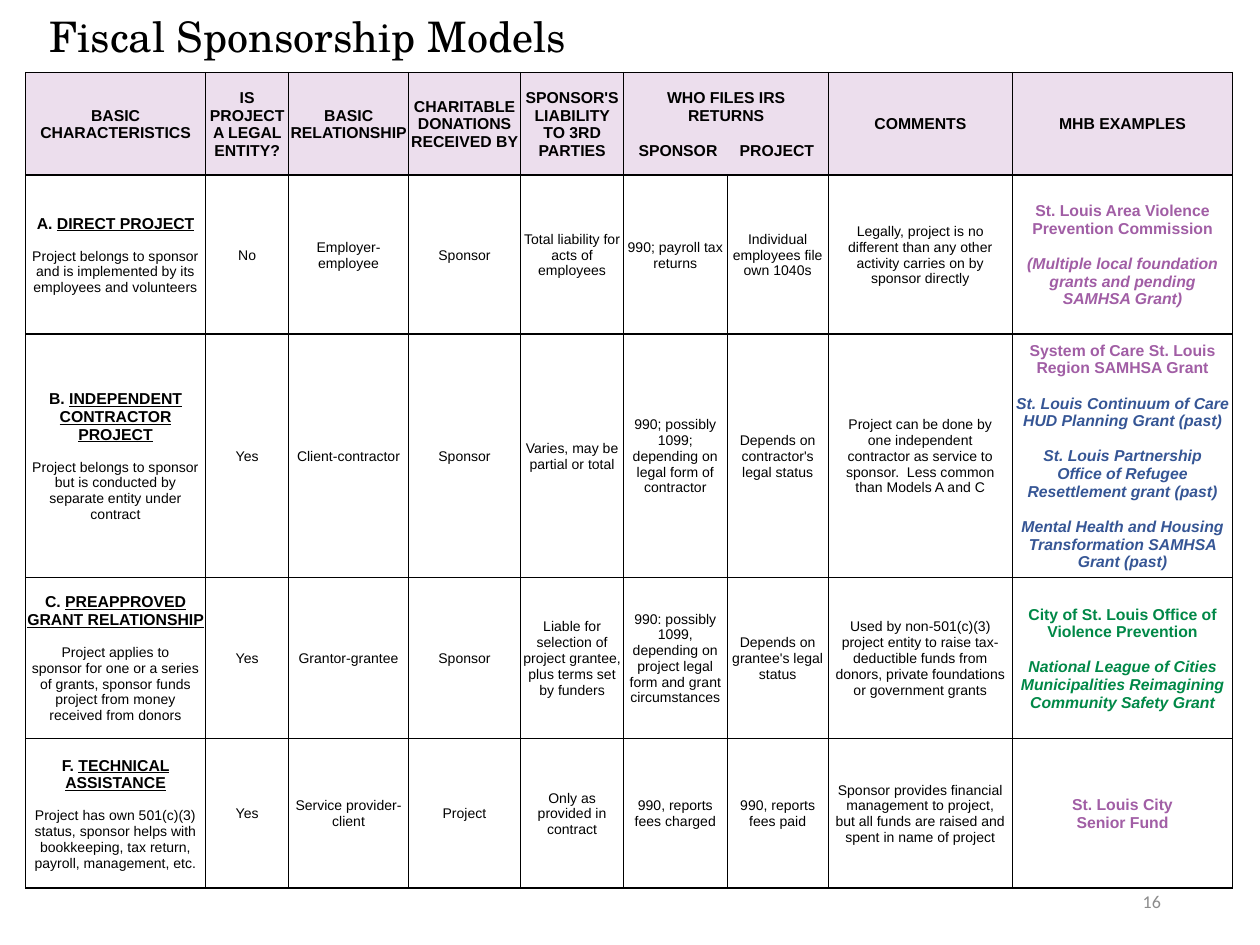
from dataclasses import dataclass

from lxml import etree
from pptx import Presentation
from pptx.dml.color import RGBColor
from pptx.enum import text as t
from pptx.oxml import ns
from pptx.util import Pt


@dataclass(frozen=True)
class Theme:
    ink: str = "000000"
    gray: str = "8C8C8C"
    tint: str = "ECDEED"
    plum: str = "A15EA5"
    blue: str = "365695"
    green: str = "008847"
    serif: str = "TeX Gyre Schola"
    sans: str = "Arial"
    foot: str = "Calibri"
    title: float = 24
    head: float = 9
    body: float = 8
    page: float = 10.3
    gap: float = 10


TH = Theme()
MID = t.MSO_ANCHOR.MIDDLE
COLS = [103, 47.5, 68.5, 64, 59, 59, 58, 105, 126]
ROWS = [58.5, 91, 131.5, 92, 85.5]
FILES = 5  # first of the two columns under the tax returns heading
HEADS = ["BASIC CHARACTERISTICS", "IS PROJECT A LEGAL ENTITY?",
         "BASIC RELATIONSHIP", "CHARITABLE DONATIONS RECEIVED BY",
         "SPONSOR'S LIABILITY TO 3RD PARTIES", "WHO FILES IRS RETURNS", "",
         "COMMENTS", "MHB EXAMPLES"]

# Letter, name, summary, plain cells, examples, colours of first and later examples
MODELS = [
    ("A. ", "DIRECT PROJECT",
     "Project belongs to sponsor and is implemented by its employees and volunteers",
     ["No", "Employer-employee", "Sponsor", "Total liability for acts of employees",
      "990; payroll tax returns", "Individual employees file own 1040s",
      "Legally, project is no different than any other activity carries on by\n"
      "sponsor directly"],
     ["St. Louis Area Violence Prevention Commission",
      "(Multiple local foundation grants and pending SAMHSA Grant)"],
     (TH.plum, TH.plum)),
    ("B. ", "INDEPENDENT CONTRACTOR PROJECT",
     "Project belongs to sponsor but is conducted by separate entity under contract",
     ["Yes", "Client-contractor", "Sponsor", "Varies, may be partial or total",
      "990; possibly 1099; depending on legal form of contractor",
      "Depends on contractor's legal status",
      "Project can be done by\none independent\n"
      "contractor as service to sponsor.  Less common\nthan Models A and C"],
     ["System of Care St. Louis Region SAMHSA Grant",
      "St. Louis Continuum of Care HUD Planning Grant (past)",
      "St. Louis Partnership\nOffice of Refugee Resettlement grant (past)",
      "Mental Health and Housing Transformation SAMHSA Grant (past)"],
     (TH.plum, TH.blue)),
    ("C. ", "PREAPPROVED GRANT RELATIONSHIP",
     "Project applies to\nsponsor for one or a series of grants, sponsor funds "
     "project from money\nreceived from donors",
     ["Yes", "Grantor-grantee", "Sponsor",
      "Liable for selection of project grantee, plus terms set by funders",
      "990: possibly 1099, depending on project legal form and grant circumstances",
      "Depends on grantee's legal status",
      "Used by non-501(c)(3) project entity to raise tax-deductible funds from "
      "donors, private foundations or government grants"],
     ["City of St. Louis Office of Violence Prevention",
      "National League of Cities Municipalities Reimagining Community Safety Grant"],
     (TH.green, TH.green)),
    ("F. ", "TECHNICAL ASSISTANCE",
     "Project has own 501(c)(3) status, sponsor helps with bookkeeping, "
     "tax return, payroll, management, etc.",
     ["Yes", "Service provider-client", "Project", "Only as provided in contract",
      "990, reports fees charged", "990, reports fees paid",
      "Sponsor provides financial management to project,\n"
      "but all funds are raised and spent in name of project"],
     ["St. Louis City\nSenior Fund"],
     (TH.plum, TH.plum)),
]


def style(font, size, color=TH.ink, face=TH.sans, bold=False, italic=False):
    font.size, font.name, font.bold, font.italic = Pt(size), face, bold, italic
    font.color.rgb = RGBColor.from_string(color)


def write(frame, block, size, gap=0, **look):
    """Put each line of the block in its own paragraph, the gap before the first."""
    for i, line in enumerate(block.split("\n")):
        used = frame.text
        para = frame.add_paragraph() if used else frame.paragraphs[0]
        para.text = line
        para.alignment = t.PP_ALIGN.CENTER
        if used and gap and i == 0:
            para.space_before = Pt(gap)
        for run in para.runs:
            style(run.font, size, **look)
    return para


def frame_cell(cell, fill=None):
    """Set the insets, borders and fill of a cell."""
    cell.vertical_anchor = MID
    cell.margin_left = cell.margin_right = cell.margin_top = Pt(0.72)
    cell.margin_bottom = 0
    props = cell._tc.get_or_add_tcPr()
    for side, width in zip("LRTB", (0.5, 0.5, 1, 1)):
        line = etree.SubElement(props, ns.qn(f"a:ln{side}"), w=str(Pt(width)))
        solid = etree.SubElement(line, ns.qn("a:solidFill"))
        etree.SubElement(solid, ns.qn("a:srgbClr"), val=TH.ink)
    if fill:
        cell.fill.solid()
        cell.fill.fore_color.rgb = RGBColor.from_string(fill)
    else:
        cell.fill.background()


def fill_heads(grid):
    for col, head in enumerate(HEADS):
        cell = grid.cell(0, col)
        frame_cell(cell, TH.tint)
        if head:
            write(cell.text_frame, head, TH.head, bold=True)
    wide = grid.cell(0, FILES)
    wide.merge(grid.cell(0, FILES + 1))
    wide.margin_left = wide.margin_right = Pt(8)
    para = write(wide.text_frame, "\tSPONSOR\tPROJECT", TH.head, TH.gap, bold=True)
    para.alignment = t.PP_ALIGN.LEFT
    tabs = etree.SubElement(para._p.get_or_add_pPr(), ns.qn("a:tabLst"))
    for stop in (23, 79.5):
        etree.SubElement(tabs, ns.qn("a:tab"), pos=str(Pt(stop)), algn="ctr")


def fill_model(cells, model):
    letter, name, about, plain, cases, hues = model
    for cell in cells:
        frame_cell(cell)
    first, *middle, last = [cell.text_frame for cell in cells]
    para = write(first, letter, TH.head, bold=True)
    run = para.add_run()
    run.text = name
    style(run.font, TH.head, bold=True)
    run.font.underline = True
    write(first, about, TH.body, TH.gap - 1)
    for frame, words in zip(middle, plain):
        write(frame, words, TH.body)
    for i, case in enumerate(cases):
        write(last, case, TH.head, TH.gap, color=hues[i > 0], bold=True, italic=i > 0)


def add_grid(slide, left, top):
    box = slide.shapes.add_table(len(ROWS), len(COLS), Pt(left), Pt(top),
                                 Pt(sum(COLS)), Pt(sum(ROWS)))
    grid = box.table
    grid.first_row = grid.horz_banding = False
    for col, width in zip(grid.columns, COLS):
        col.width = Pt(width)
    for row, height in zip(grid.rows, ROWS):
        row.height = Pt(height)
    fill_heads(grid)
    for row, model in enumerate(MODELS, 1):
        fill_model([grid.cell(row, col) for col in range(len(COLS))], model)


def add_title(slide, left, top, width, height):
    title = slide.shapes.title
    title.left, title.top, title.width, title.height = map(Pt, (left, top, width, height))
    frame = title.text_frame
    frame.text = "Fiscal Sponsorship Models"
    frame.vertical_anchor = MID
    para = frame.paragraphs[0]
    para.alignment, para.line_spacing = t.PP_ALIGN.LEFT, 0.9
    style(para.runs[0].font, TH.title, face=TH.serif)


def add_page(slide, left, top, width, height):
    box = slide.shapes.add_textbox(*map(Pt, (left, top, width, height)))
    frame = box.text_frame
    frame.word_wrap, frame.vertical_anchor = True, MID
    para = write(frame, "16", TH.page, color=TH.gray, face=TH.foot)
    para.alignment = t.PP_ALIGN.RIGHT


def main():
    deck = Presentation()
    deck.slide_width, deck.slide_height = Pt(720), Pt(540)
    slide = deck.slides.add_slide(deck.slide_layouts[5])
    add_title(slide, 21, -8, 620.5, 60.5)
    add_page(slide, 508.5, 500.5, 162, 29)
    add_grid(slide, 14.5, 41.5)
    deck.save("out.pptx")


if __name__ == "__main__":
    main()
